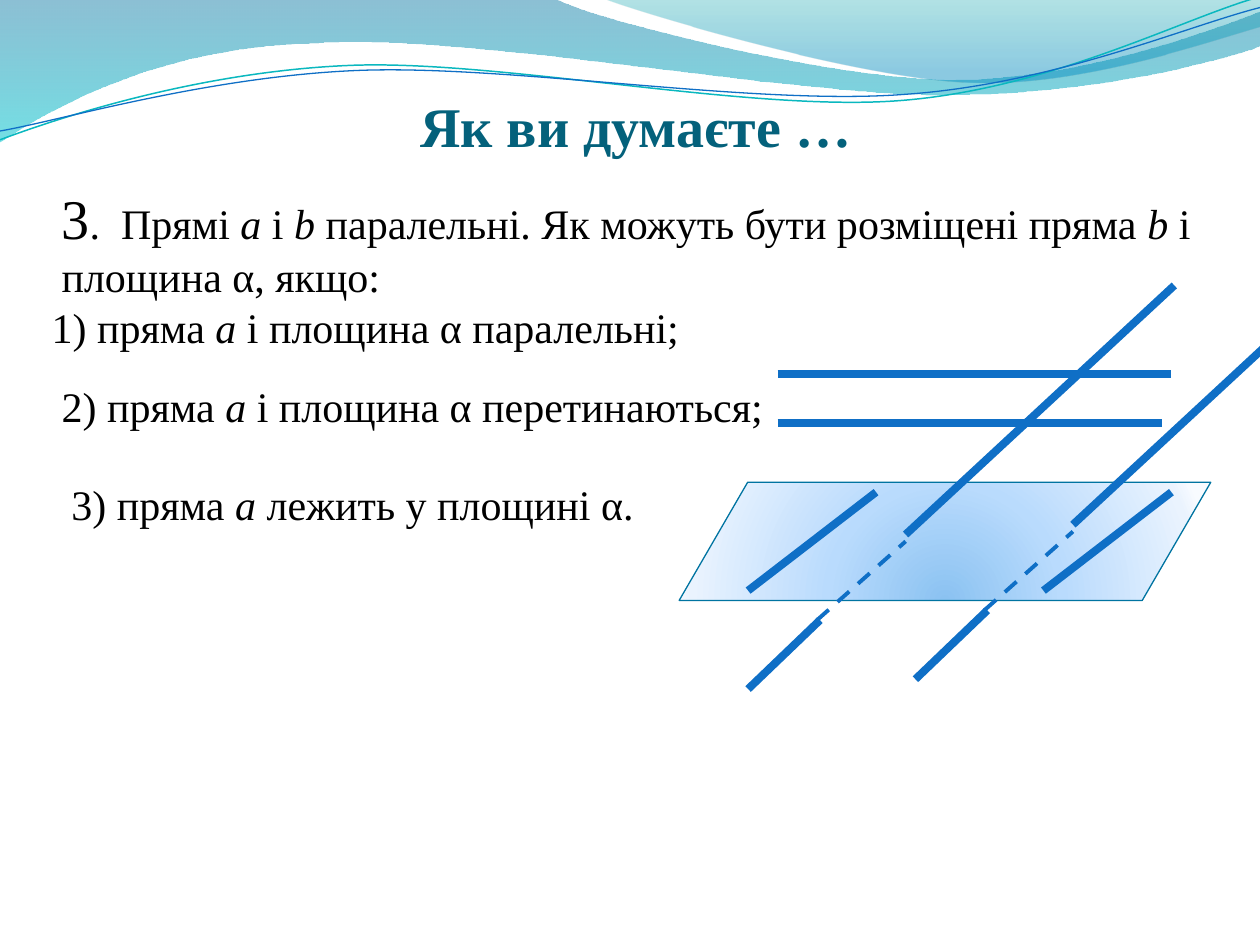
import pptx
import pptx.util
import pptx.oxml
import pptx.oxml.ns
import pptx.dml.color
import pptx.enum.dml
import pptx.enum.shapes
import pptx.enum.text

RGB = pptx.dml.color.RGBColor.from_string
Pt = pptx.util.Pt
THEME = dict(font="Times New Roman", title="04617B", text="000000", line="0F6FC6",
             edge="0074A1", teal="0AB8BF", title_size=32, big_size=32, body_size=24)
NS = 'xmlns:a="http://schemas.openxmlformats.org/drawingml/2006/main"'
DOWN = '<a:lin ang="5400000" scaled="1"/>'
FROM_BELOW = '<a:path path="circle"><a:fillToRect l="50000" t="130000" r="50000" b="-30000"/></a:path>'

prs = pptx.Presentation()
prs.slide_width, prs.slide_height = pptx.util.Inches(10), pptx.util.Inches(7.5)
s = prs.slides.add_slide(prs.slide_layouts[5])
CELL = prs.slide_width / 128       # square grid: 128 columns by 96 rows
SHARE = prs.slide_width / 100      # curves use hundredths of the slide width


def gradient(sp, stops, direction):
    """Fill sp with (position, colour, opacity) stops, all in percent."""
    gs = "".join(f'<a:gs pos="{pos * 1000}"><a:srgbClr val="{color}"><a:alpha val="{alpha * 1000}"/>'
                 "</a:srgbClr></a:gs>" for pos, color, alpha in stops)
    sp.fill.background()
    none = sp.element.spPr.find(pptx.oxml.ns.qn("a:noFill"))
    none.getparent().replace(none, pptx.oxml.parse_xml(
        f'<a:gradFill {NS} rotWithShape="1"><a:gsLst>{gs}</a:gsLst>{direction}</a:gradFill>'))


def curve(start, segments, closed):
    """Draw straight (x, y) and cubic (x1, y1, x2, y2, x, y) segments as one outline."""
    points = [start] + [seg[i:i + 2] for seg in segments for i in range(0, len(seg), 2)]
    emu = [(round(x * SHARE), round(y * SHARE)) for x, y in points]
    builder = s.shapes.build_freeform(*emu[0], scale=1.0)
    builder.add_line_segments(emu[1:], close=closed)
    sp = builder.convert_to_shape()
    sp.shadow.inherit = False
    steps = iter(sp.element.xpath(".//a:lnTo"))
    for seg in segments:
        first = next(steps)
        if len(seg) == 6:
            cubic = pptx.oxml.parse_xml(f"<a:cubicBezTo {NS}/>")
            first.addprevious(cubic)
            for step in (first, next(steps), next(steps)):
                cubic.append(step[0])
                step.getparent().remove(step)
    return sp


# Waves along the top
waves = [
    ((0, 0), [(44, -0.1), (47.6, 1.7, 66.4, 6.3, 75.8, 6.3), (85.3, 6.3, 95.8, 2.6, 100, 0.9),
              (100.1, 3.6), (98.3, 4.4, 87, 7.6, 74.6, 7.5), (62.2, 7.5, 38.2, 2.8, 25.7, 3.4),
              (12.9, 3.6, 4.6, 8.3, -0.1, 11.3)],
     [(0, "0074A1", 45), (100, "00C6CF", 55)]),
    ((47.9, -0.1), [(50.9, 1.1, 68.2, 6.2, 76.9, 6.5), (85.6, 6.9, 96.1, 3.2, 100, 2.1), (100, 0)],
     [(0, "00A1A9", 30), (80, "008BBF", 45)]),
]
for start, segments, stops in waves:
    sp = curve(start, segments, True)
    gradient(sp, stops, DOWN)
    sp.line.fill.background()

strands = [
    ((0, 11.1), [(4.8, 9.3, 15.8, 5.7, 27.7, 5.2), (39.5, 4.7, 59.3, 8.9, 71.3, 8),
                 (83.3, 7.1, 93.8, 1.5, 99.8, -0.2)], "teal", 0.85),
    ((0, 10.4), [(4.7, 9.6, 16.4, 6.1, 28.3, 5.6), (40.3, 5.1, 59.7, 8.4, 71.7, 7.5),
                 (83.6, 6.7, 94.1, 2.1, 100, 0.6)], "line", 0.75),
]
for start, segments, color, width in strands:
    sp = curve(start, segments, False)
    sp.fill.background()
    sp.line.color.rgb = RGB(THEME[color])
    sp.line.width = Pt(width)

# Title, in front of the waves
title = s.shapes.title
title.element.getparent().append(title.element)
title.left, title.top, title.width, title.height = (round(n * CELL) for n in (7, 7.9, 115.2, 8.2))
tf = title.text_frame
tf.margin_left = tf.margin_right = tf.margin_bottom = 0
tf.vertical_anchor = pptx.enum.text.MSO_ANCHOR.BOTTOM
p = tf.paragraphs[0]
p.alignment = pptx.enum.text.PP_ALIGN.CENTER
r = p.add_run()
r.text = "Як ви думаєте …"
r.font.name, r.font.size, r.font.bold = THEME["font"], Pt(THEME["title_size"]), True
r.font.color.rgb = RGB(THEME["title"])

# Plane α
sp = s.shapes.add_shape(pptx.enum.shapes.MSO_SHAPE.PARALLELOGRAM,
                        *(round(n * CELL) for n in (69, 49, 54, 12)))
sp.adjustments[0] = 0.58
sp.shadow.inherit = False
gradient(sp, [(0, "8BC2F1", 100), (43, "B9DBFD", 100), (93, "EAF3FE", 100), (100, "F8FBFF", 100)],
         FROM_BELOW)
sp.line.color.rgb = RGB(THEME["edge"])
sp.line.width = Pt(0.75)

# Lines a and b: parallel to the plane, crossing it, lying in it
crossing = [(92, 54.3, 119.3, 29, False), (83, 63, 92, 55, True), (76, 70, 83.3, 63, False)]
lines = [(79, 43, 118, 43, False), (79, 38, 119, 38, False)]
lines += [(x1 + dx, y1 + dy, x2 + dx, y2 + dy, hidden)
          for dx, dy in ((0, 0), (17, -1)) for x1, y1, x2, y2, hidden in crossing]
lines += [(76 + dx, 60, 89 + dx, 50, False) for dx in (0, 30)]
for *ends, hidden in lines:
    cxn = s.shapes.add_connector(pptx.enum.shapes.MSO_CONNECTOR.STRAIGHT,
                                 *(round(n * CELL) for n in ends))
    cxn.line.color.rgb = RGB(THEME["line"])
    cxn.line.width = Pt(2.25 if hidden else 4.5)
    if hidden:
        cxn.line.dash_style = pptx.enum.dml.MSO_LINE.DASH
    cxn.element.spPr.append(pptx.oxml.parse_xml(f"<a:effectLst {NS}/>"))

# Question and its cases: text between asterisks is italic
texts = [
    ((5, 18, 123, 13.3), "3",
     ".  Прямi *a *i *b *паралельнi. Як можуть бути розмiщенi пряма *b *i площина α, якщо:"),
    ((4, 30, 66.7, 6.4), "", "1) пряма *a *i площина α паралельнi;"),
    ((5, 38, 75.8, 6.4), "", "2) пряма *a *i площина α перетинаються;"),
    ((6, 48, 60.3, 6.4), "", "3) пряма *a *лежить у площинi α."),
]
for box, number, text in texts:
    tf = s.shapes.add_textbox(*(round(n * CELL) for n in box)).text_frame
    tf.word_wrap = bool(number)
    p = tf.paragraphs[0]
    runs = [(number, "big_size", False)] if number else []
    runs += [(part, "body_size", i % 2 == 1) for i, part in enumerate(text.split("*"))]
    for part, size, italic in runs:
        r = p.add_run()
        r.text = part
        r.font.name, r.font.size, r.font.italic = THEME["font"], Pt(THEME[size]), italic
        r.font.color.rgb = RGB(THEME["text"])

prs.save("out.pptx")
